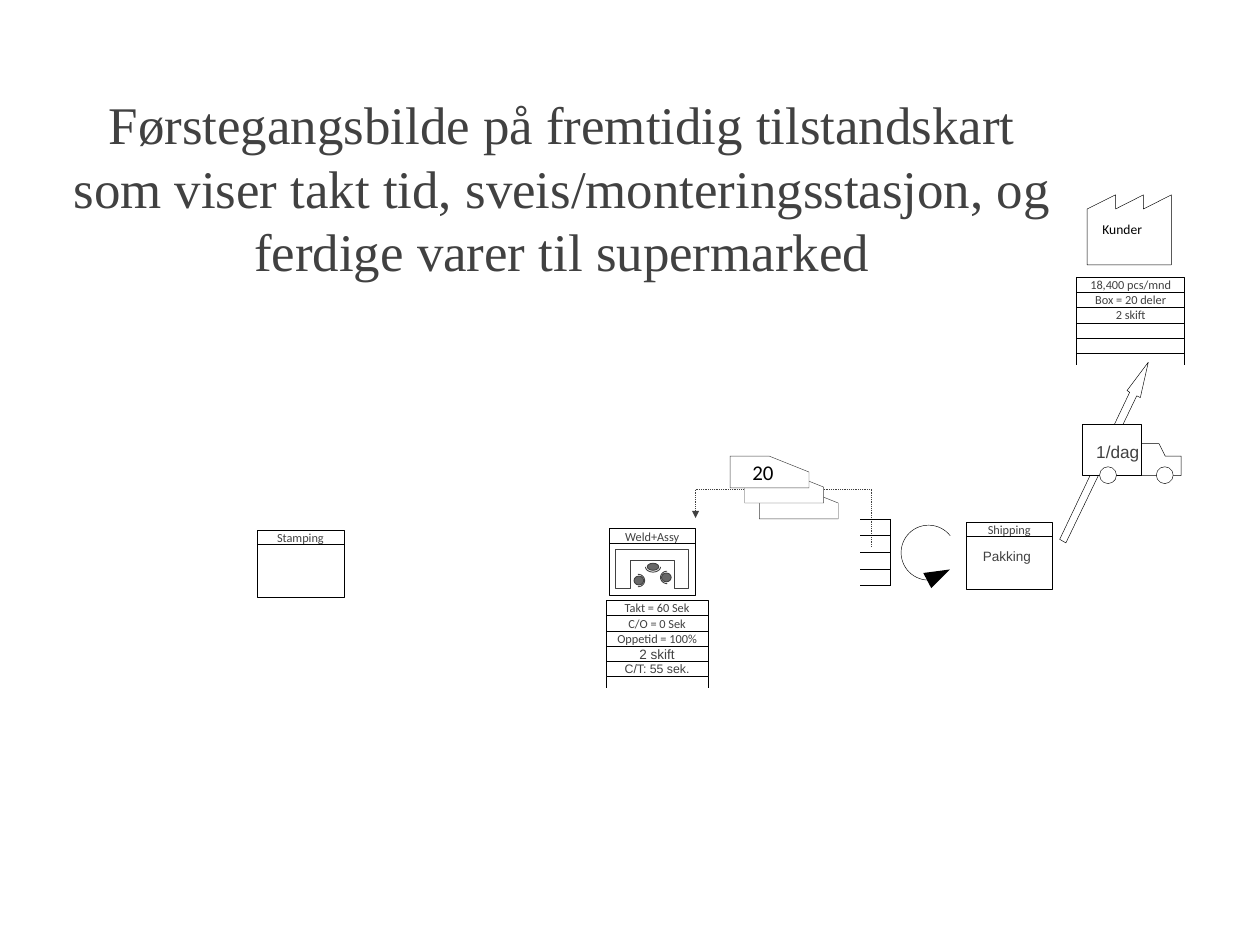
from math import cos, radians, sin

from lxml.etree import SubElement
from pptx import Presentation
from pptx.dml.color import RGBColor
from pptx.enum.dml import MSO_LINE
from pptx.enum.shapes import MSO_CONNECTOR, MSO_SHAPE
from pptx.enum.text import MSO_ANCHOR, PP_ALIGN
from pptx.oxml.ns import qn
from pptx.util import Inches, Pt

BLACK, GRAY, DARK, WHITE = "000000", "414141", "676767", "FFFFFF"
THIN, MEDIUM = 0.38, 0.75


def rgb(value):
    return RGBColor.from_string(value)


def paint(sp, fill=None, line=BLACK, weight=THIN):
    sp.shadow.inherit = False
    if fill:
        sp.fill.solid()
        sp.fill.fore_color.rgb = rgb(fill)
    else:
        sp.fill.background()
    if line:
        sp.line.color.rgb = rgb(line)
        sp.line.width = Pt(weight)
    else:
        sp.line.fill.background()
    return sp


def write(sp, text, size, font="Calibri", color=GRAY, inset=0.0, wrap=False, anchor=MSO_ANCHOR.TOP):
    tf = sp.text_frame
    tf.text = text
    tf.word_wrap = wrap
    tf.vertical_anchor = anchor
    tf.margin_left = tf.margin_right = Inches(inset)
    tf.margin_top = tf.margin_bottom = Inches(inset if wrap else 0)
    p = tf.paragraphs[0]
    p.alignment = PP_ALIGN.CENTER
    r = p.runs[0]
    r.font.size, r.font.name = Pt(size), font
    r.font.color.rgb = rgb(color)


def preset(s, x, y, w, h, kind=MSO_SHAPE.RECTANGLE, **look):
    sp = s.shapes.add_shape(kind, Inches(x), Inches(y), Inches(w), Inches(h))
    return paint(sp, **look)


def label(s, x, y, w, h, *args, **style):
    write(s.shapes.add_textbox(Inches(x), Inches(y), Inches(w), Inches(h)), *args, **style)


def outline(s, x, y, points, close=True, **look):
    emu = [(Inches(x + dx), Inches(y + dy)) for dx, dy in points]
    fb = s.shapes.build_freeform(*emu[0])
    fb.add_line_segments(emu[1:], close=close)
    return paint(fb.convert_to_shape(), **look)


def arc(s, cx, cy, rx, ry, start, end, **look):
    angles = [radians(start + (end - start) * i / 36) for i in range(37)]
    outline(s, cx, cy, [(rx * cos(a), ry * sin(a)) for a in angles], close=False, **look)


def line(s, x1, y1, x2, y2, color=BLACK, weight=THIN, dotted=False, arrow=False):
    c = s.shapes.add_connector(MSO_CONNECTOR.STRAIGHT, Inches(x1), Inches(y1), Inches(x2), Inches(y2))
    c.line.color.rgb = rgb(color)
    c.line.width = Pt(weight)
    if dotted:
        c.line.dash_style = MSO_LINE.ROUND_DOT
    if arrow:
        SubElement(c.line._get_or_add_ln(), qn("a:tailEnd"), type="triangle")
    SubElement(c._element.spPr, qn("a:effectLst"))


def title(s, x, y, w, h):
    sp = s.shapes.title
    sp.left, sp.top, sp.width, sp.height = Inches(x), Inches(y), Inches(w), Inches(h)
    write(sp, "Førstegangsbilde på fremtidig tilstandskart som viser takt tid, "
          "sveis/monteringsstasjon, og ferdige varer til supermarked",
          43, "Times New Roman", inset=0.06, wrap=True, anchor=MSO_ANCHOR.MIDDLE)


def kanban(s, x, y):
    for x1, x2 in ((x - 0.39, x + 0.54), (x + 0.79, x + 1.59)):
        line(s, x1, y + 0.38, x2, y + 0.38, GRAY, MEDIUM, dotted=True)
    line(s, x + 1.59, y + 0.38, x + 1.59, y + 1.03, GRAY, MEDIUM, dotted=True)
    line(s, x - 0.39, y + 0.38, x - 0.39, y + 0.7, GRAY, MEDIUM, dotted=True, arrow=True)
    card = [(0, 0), (0.44, 0), (0.89, 0.18), (0.89, 0.36), (0, 0.36)]
    for i in (2, 1, 0):
        outline(s, x + 0.165 * i, y + 0.18 * i - 0.01 * (i > 0), card, fill=WHITE, line=GRAY)
    label(s, x + 0.25, y + 0.04, 0.24, 0.29, "20", 17, color=BLACK)


def station(s, x, y, name):
    preset(s, x, y + 0.16, 0.98, 0.59, fill=WHITE)
    write(preset(s, x, y, 0.98, 0.16), name, 10, inset=0.04)


def operator(s, cx, cy, rx, ry, start, dx, dy):
    preset(s, cx - rx, cy - ry, 2 * rx, 2 * ry, MSO_SHAPE.OVAL, fill=DARK, line=GRAY, weight=MEDIUM)
    arc(s, cx + dx, cy + dy, rx + 0.02, ry + 0.02, start, start + 180, line=GRAY, weight=MEDIUM)


def work_cell(s, x, y):
    bench = [(0, 0), (0.82, 0), (0.82, 0.43), (0.66, 0.43), (0.66, 0.12),
             (0.17, 0.12), (0.17, 0.43), (0, 0.43)]
    outline(s, x, y, bench, line=GRAY, weight=MEDIUM)
    operator(s, x + 0.42, y + 0.19, 0.065, 0.04, 0, 0, 0)
    operator(s, x + 0.26, y + 0.345, 0.055, 0.05, -90, -0.01, 0)
    operator(s, x + 0.57, y + 0.31, 0.055, 0.05, 90, 0.01, 0)


def data_box(s, x, y, w, rows):
    step = 0.172
    for i, row in enumerate(rows):
        sp = preset(s, x, y + i * step, w, step)
        if row:
            write(sp, *row, inset=0.04)
    bottom = y + len(rows) * step
    for edge in (x, x + w):
        line(s, edge, bottom, edge, bottom + 0.13)


def customer(s, x, y):
    roof = [(0.95, 0), (0.635, 0.16), (0.635, 0), (0.32, 0.16), (0.32, 0), (0, 0.16)]
    outline(s, x, y, roof + [(0, 0.79), (0.95, 0.79)])
    label(s, x + 0.17, y + 0.3, 0.45, 0.19, "Kunder", 11, color=BLACK)


def supermarket(s, x, y, w, h):
    for i in range(5):
        line(s, x, y + i * h / 4, x + w, y + i * h / 4)
    line(s, x + w, y, x + w, y + h)


def pull_loop(s, cx, cy, r):
    arc(s, cx, cy, r, r, -38, -270)
    outline(s, cx, cy, [(0.03, 0.4), (0.24, 0.19), (-0.06, 0.23)], fill=BLACK, line=None)


def delivery(s, x, y):
    outline(s, x, y, [(-0.25, 1.3), (-0.18, 1.34), (0.62, -0.32), (0.66, -0.3),
                      (0.75, -0.7), (0.51, -0.38), (0.54, -0.36)])
    outline(s, x + 0.67, y + 0.22, [(0.45, 0.36), (0.45, 0.14), (0.27, 0.14),
                                    (0.2, 0), (0, 0), (0, 0.36)], fill=WHITE)
    preset(s, x, y, 0.67, 0.58, fill=WHITE)
    for wheel in (0.2, 0.84):
        preset(s, x + wheel, y + 0.48, 0.19, 0.19, MSO_SHAPE.OVAL, fill=WHITE)
    label(s, x - 0.02, y + 0.12, 0.85, 0.38, "1/dag", 14, "Arial", inset=0.07, wrap=True)


def main():
    prs = Presentation()
    prs.slide_width, prs.slide_height = Inches(14.22), Inches(10.67)
    s = prs.slides.add_slide(prs.slide_layouts[5])
    title(s, 0.71, 0.43, 11.26, 3.36)
    kanban(s, 8.24, 5.15)
    station(s, 2.9, 5.99, "Stamping")
    station(s, 6.87, 5.97, "Weld+Assy")
    work_cell(s, 6.95, 6.21)
    data_box(s, 6.84, 6.78, 1.15, [("Takt = 60 Sek", 10), ("C/O = 0 Sek", 10), ("Oppetid = 100%", 10),
                                   ("2 skift", 11, "Arial"), ("C/T: 55 sek.", 10, "Arial")])
    supermarket(s, 9.71, 5.86, 0.34, 0.75)
    pull_loop(s, 10.48, 6.24, 0.31)
    station(s, 10.9, 5.9, "Shipping")
    label(s, 10.9, 6.12, 0.93, 0.33, "Pakking", 11, "Arial", inset=0.07, wrap=True)
    customer(s, 12.27, 2.2)
    data_box(s, 12.15, 3.13, 1.22, [("18,400 pcs/mnd", 10), ("Box = 20 deler", 10), ("2 skift", 10), None, None])
    delivery(s, 12.21, 4.79)
    prs.save("out.pptx")


if __name__ == "__main__":
    main()
